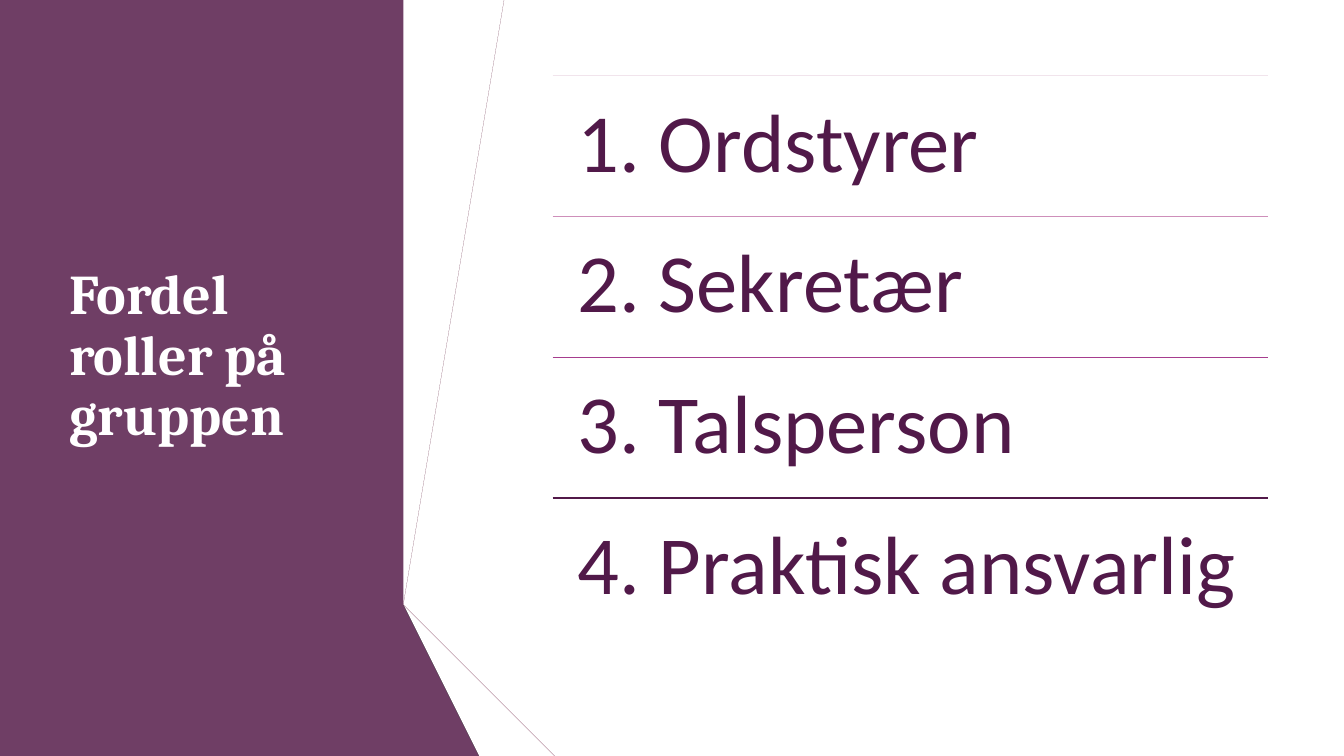
from lxml.etree import SubElement
from pptx import Presentation
from pptx.dml.color import RGBColor
from pptx.enum.shapes import MSO_CONNECTOR
from pptx.enum.text import MSO_ANCHOR, PP_ALIGN
from pptx.oxml.ns import qn
from pptx.util import Inches, Pt

TITLE = "Fordel roller på gruppen"
ROLES = ["1. Ordstyrer", "2. Sekretær", "3. Talsperson", "4. Praktisk ansvarlig"]

COLORS = {
    "panel": "6F3E65", "pink": "B54175", "grey": "595959",
    "grey_edge": "262626", "pink_edge": "5A203A",
    "pink_fold": "883158", "grey_fold": "404040",
    "title": "FFFFFF", "role": "511949",
}
RULES = ["F1E4EC", "CE8FBA", "A63D8E", "521949"]

W, H = 13.33, 7.5
# Outlines of the panel and folded ribbons, back to front
OUTLINES = [
    ("panel", [(0, 0), (4.49, 0), (3.56, 5.75), (4.82, H), (0, H)]),
    ("pink", [(3.96, 5.78), (4.23, 5.83), (5.19, 0), (4.91, 0)]),
    ("grey", [(4.85, 0), (4.57, 0), (3.63, 5.73), (3.9, 5.77)]),
    ("grey_edge", [(3.63, 5.73), (4.91, H), (4.97, H)]),
    ("pink_edge", [(3.96, 5.79), (5.54, H), (5.6, H)]),
    ("pink_fold", [(3.96, 5.79), (5.6, H), (6.29, H), (4.23, 5.83), (3.96, 5.78)]),
    ("grey_fold", [(5.48, H), (3.95, 5.83), (3.9, 5.77), (3.63, 5.73), (4.97, H)]),
]
TOP, BODY_H = H * 0.1, H * 0.745
LIST_LEFT, LIST_W = 5.48, 7.1
ROW_H = BODY_H / len(ROLES)

TITLE_FONT = {"name": "Cambria", "size": Pt(40), "bold": True}
ROLE_FONT = {"name": "Calibri", "size": Pt(59), "bold": False}


def rgb(value):
    return RGBColor.from_string(value)


def add_text(s, text, box, font, color, anchor, inset):
    tf = s.shapes.add_textbox(*map(Inches, box)).text_frame
    tf.word_wrap = True
    tf.vertical_anchor = anchor
    for side, margin in zip(("left", "top", "right", "bottom"), inset):
        setattr(tf, f"margin_{side}", Inches(margin))
    p = tf.paragraphs[0]
    p.alignment, p.line_spacing = PP_ALIGN.LEFT, 0.9
    r = p.add_run()
    r.text = text
    for key, value in font.items():
        setattr(r.font, key, value)
    r.font.color.rgb = rgb(color)


def add_outline(s, name, points):
    fb = s.shapes.build_freeform(*points[0], scale=Inches(1))
    fb.add_line_segments(points[1:], close=True)
    sp = fb.convert_to_shape()
    sp.shadow.inherit = False
    sp.fill.solid()
    sp.fill.fore_color.rgb = rgb(COLORS[name])
    sp.line.fill.background()


def add_rule(s, y, color):
    line = s.shapes.add_connector(
        MSO_CONNECTOR.STRAIGHT, Inches(LIST_LEFT), Inches(y),
        Inches(LIST_LEFT + LIST_W), Inches(y))
    line.line.color.rgb = rgb(color)
    line.line.width = Pt(1)
    SubElement(line._element.spPr, qn("a:effectLst"))


def main():
    prs = Presentation()
    prs.slide_width, prs.slide_height = Inches(W), Inches(H)
    s = prs.slides.add_slide(prs.slide_layouts[6])

    # Panel and ribbons
    for name, points in OUTLINES:
        add_outline(s, name, points)

    # Title
    add_text(s, TITLE, (0.59, TOP, 3.04, BODY_H), TITLE_FONT, COLORS["title"],
             MSO_ANCHOR.MIDDLE, (0.1, 0.05, 0.1, 0.05))

    # Ruled list of roles
    for i, (role, color) in enumerate(zip(ROLES, RULES)):
        y = TOP + i * ROW_H
        add_rule(s, y, color)
        add_text(s, role, (LIST_LEFT, y, LIST_W, ROW_H), ROLE_FONT,
                 COLORS["role"], MSO_ANCHOR.TOP, (0.25,) * 4)

    prs.save("out.pptx")


if __name__ == "__main__":
    main()
